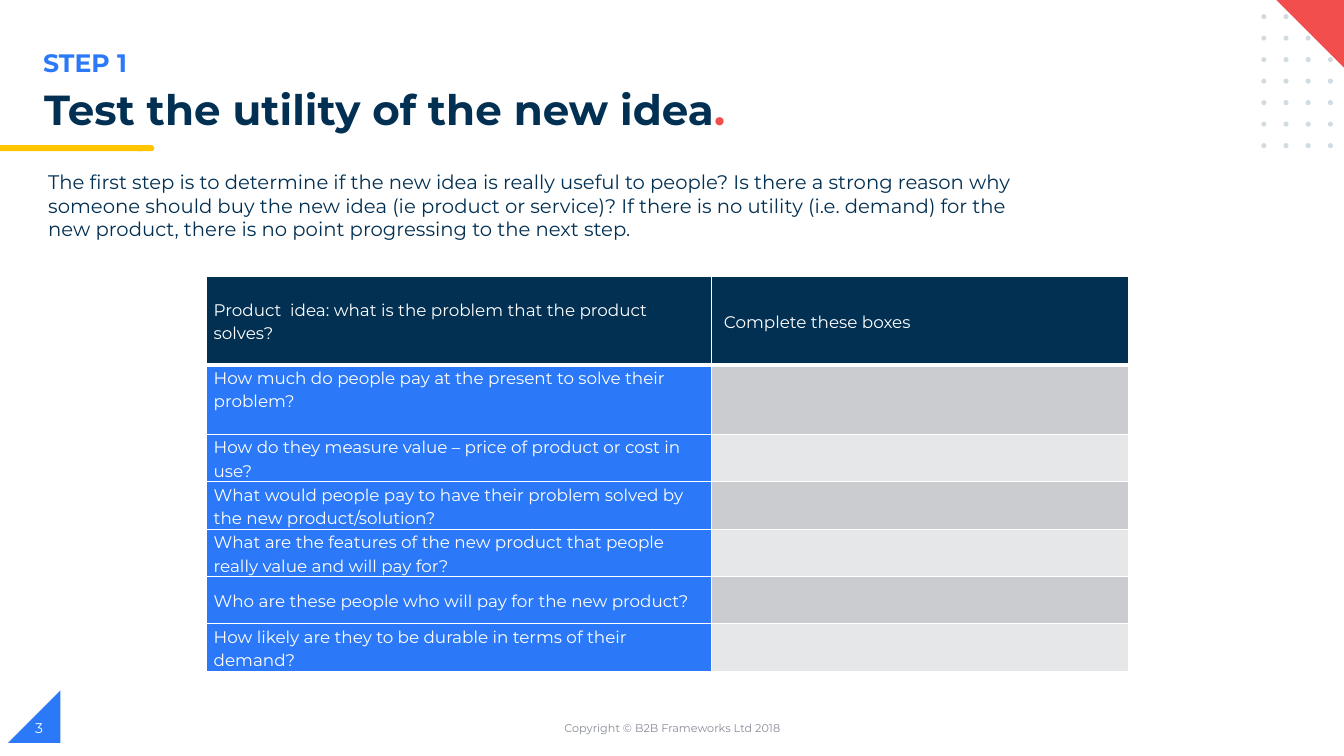
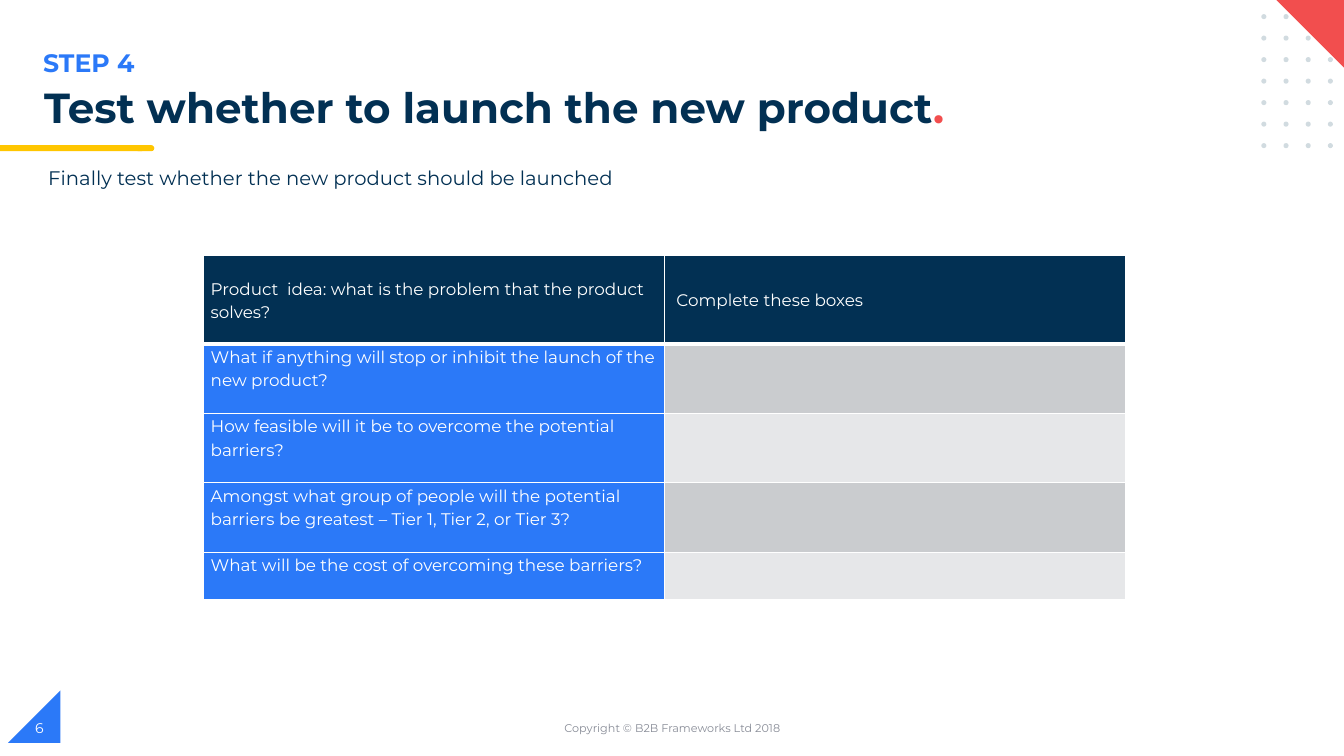
from dataclasses import dataclass

from lxml import etree
from pptx import Presentation
from pptx import util as u
from pptx.dml.color import RGBColor
from pptx.enum import shapes, text
from pptx.oxml import ns

# Shared look
FONT = "Montserrat"
NAVY, BLUE, RED, YELLOW = "023053", "2B79F8", "F24E4E", "FFC600"
WHITE, DOT_GREY, FOOTER_GREY = "FFFFFF", "D1DBE0", "888C97"
ANSWER_FILLS = ("CACCCF", "E6E7E9")
TOP, MIDDLE = text.MSO_ANCHOR.TOP, text.MSO_ANCHOR.MIDDLE
SHAPE = shapes.MSO_SHAPE

HEADER = ("Product  idea: what is the problem that the product solves?",
          "Complete these boxes")
HEADER_HEIGHT, TALL, SHORT = 0.88, 0.69, 0.47


@dataclass
class Question:
    wording: str
    height: float = SHORT
    anchor: text.MSO_ANCHOR = TOP


@dataclass
class Step:
    step: int
    number: int
    title: str
    title_top: float
    intro: str
    intro_top: float
    intro_height: float
    table_left: float
    table_top: float
    columns: tuple[float, float]
    questions: list[Question]


STEPS = [
    Step(1, 3, "Test the utility of the new idea", 0.84,
         "The first step is to determine if the new idea is really useful to people? "
         "Is there a strong reason why someone should buy the new idea (ie product or "
         "service)? If there is no utility (i.e. demand) for the new product, there is "
         "no point progressing to the next step.", 1.64, 1.04,
         2.05, 2.74, (5.01, 4.13), [
             Question("How much do people pay at the present to solve their problem?", TALL),
             Question("How do they measure value – price of product or cost in use?"),
             Question("What would people pay to have their problem solved by the new "
                      "product/solution?"),
             Question("What are the features of the new product that people really value "
                      "and will pay for?"),
             Question("Who are these people who will pay for the new product?",
                      anchor=MIDDLE),
             Question("How likely are they to be durable in terms of their demand?"),
         ]),
    Step(4, 6, "Test whether to launch the new product", 0.82,
         "Finally test whether the new product should be launched", 1.6, 0.34,
         2.02, 2.53, (4.57, 4.57), [
             Question("What if anything will stop or inhibit the launch of the new "
                      "product?", TALL),
             Question("How feasible will it be to overcome the potential barriers?", TALL),
             Question("Amongst what group of people will the potential barriers be "
                      "greatest – Tier 1, Tier 2, or Tier 3?", TALL),
             Question("What will be the cost of overcoming these barriers?"),
         ]),
]


def color(value: str) -> RGBColor:
    return RGBColor.from_string(value)


def add_span(para, wording: str, *, size: float, fill: str, bold: bool = False) -> None:
    span = para.add_run()
    span.text = wording
    span.font.name = FONT
    span.font.size = u.Pt(size)
    span.font.bold = bold
    span.font.color.rgb = color(fill)


def add_text(page, wording: str, left: float, top: float, width: float, height: float, *,
             size: float, fill: str, bold: bool = False, anchor=TOP,
             align=text.PP_ALIGN.LEFT, spacing: float = 1.0):
    """Add a one-paragraph text box and return its paragraph."""
    box = page.shapes.add_textbox(*map(u.Inches, (left, top, width, height)))
    frame = box.text_frame
    frame.word_wrap = True
    frame.vertical_anchor = anchor
    para = frame.paragraphs[0]
    para.alignment = align
    para.line_spacing = spacing
    add_span(para, wording, size=size, fill=fill, bold=bold)
    return para


def add_block(page, kind: SHAPE, left: float, top: float, width: float, height: float,
              fill: str, rotation: float = 0) -> None:
    block = page.shapes.add_shape(kind, *map(u.Inches, (left, top, width, height)))
    block.shadow.inherit = False
    block.fill.solid()
    block.fill.fore_color.rgb = color(fill)
    block.line.fill.background()
    block.rotation = rotation


def draw_frame(page, number: int) -> None:
    # Page corner and title underline
    add_block(page, SHAPE.RIGHT_TRIANGLE, 0.08, 6.85, 0.52, 0.52, BLUE, rotation=270)
    add_block(page, SHAPE.FLOWCHART_TERMINATOR, 1.34, 1.44, 0.19, 0.06, YELLOW)
    add_block(page, SHAPE.RECTANGLE, 0, 1.44, 1.41, 0.06, YELLOW)
    # Dot grid under the red corner
    row_step = (1.42 - 0.14) / 6
    for row in range(7):
        for column in range(4):
            add_block(page, SHAPE.OVAL, 12.51 + 0.22 * column, 0.14 + row_step * row,
                      0.05, 0.05, DOT_GREY)
    add_block(page, SHAPE.RIGHT_TRIANGLE, 12.65, -0.01, 0.72, 0.72, RED, rotation=180)
    # Footer
    add_text(page, "Copyright © B2B Frameworks Ltd 2018", 4.42, 7.02, 4.5, 0.4, size=8,
             fill=FOOTER_GREY, anchor=MIDDLE, align=text.PP_ALIGN.CENTER)
    add_text(page, str(number), 0.25, 7.02, 3, 0.4, size=10, fill=WHITE, anchor=MIDDLE)


def set_borders(cell, top: float, bottom: float) -> None:
    properties = cell._tc.get_or_add_tcPr()
    for side, points in (("L", 1), ("R", 1), ("T", top), ("B", bottom)):
        line = etree.SubElement(properties, ns.qn(f"a:ln{side}"), w=str(u.Pt(points)))
        solid = etree.SubElement(line, ns.qn("a:solidFill"))
        etree.SubElement(solid, ns.qn("a:srgbClr"), val=WHITE)


def fill_cell(cell, wording: str, fill: str, *, anchor=MIDDLE, left: float = 0.07,
              top_line: float = 1, bottom_line: float = 1) -> None:
    set_borders(cell, top_line, bottom_line)
    cell.fill.solid()
    cell.fill.fore_color.rgb = color(fill)
    cell.margin_left, cell.margin_right = u.Inches(left), u.Inches(0.07)
    cell.margin_top = cell.margin_bottom = u.Inches(0)
    cell.vertical_anchor = anchor
    para = cell.text_frame.paragraphs[0]
    para.line_spacing = 1.15
    if wording:
        add_span(para, wording, size=12, fill=WHITE)
    else:
        para.font.size = u.Pt(12)


def draw_table(page, step: Step) -> None:
    heights = [HEADER_HEIGHT] + [question.height for question in step.questions]
    table = page.shapes.add_table(
        len(heights), 2, u.Inches(step.table_left), u.Inches(step.table_top),
        u.Inches(sum(step.columns)), u.Inches(sum(heights))).table
    table.horz_banding = False
    for column, width in zip(table.columns, step.columns):
        column.width = u.Inches(width)
    for row, height in zip(table.rows, heights):
        row.height = u.Inches(height)

    for index, (wording, left) in enumerate(zip(HEADER, (0.07, 0.12))):
        fill_cell(table.cell(0, index), wording, NAVY, left=left, bottom_line=3)
    for index, question in enumerate(step.questions):
        top_line = 3 if index == 0 else 1
        fill_cell(table.cell(index + 1, 0), question.wording, BLUE,
                  anchor=question.anchor, top_line=top_line)
        fill_cell(table.cell(index + 1, 1), "", ANSWER_FILLS[index % 2],
                  top_line=top_line)


def draw_step(deck, step: Step) -> None:
    page = deck.slides.add_slide(deck.slide_layouts[6])
    draw_frame(page, step.number)
    add_text(page, f"STEP {step.step}", 0.33, 0.42, 6.69, 0.4, size=18, fill=BLUE, bold=True)
    title = add_text(page, step.title, 0.34, step.title_top, 10.26, 0.56, size=30,
                     fill=NAVY, bold=True, spacing=0.9)
    add_span(title, ".", size=30, fill=RED, bold=True)
    add_text(page, step.intro, 0.38, step.intro_top, 9.84, step.intro_height, size=14,
             fill=NAVY)
    draw_table(page, step)


def main() -> None:
    deck = Presentation()
    deck.slide_width, deck.slide_height = u.Inches(13.33), u.Inches(7.5)
    for step in STEPS:
        draw_step(deck, step)
    deck.save("out.pptx")


if __name__ == "__main__":
    main()
